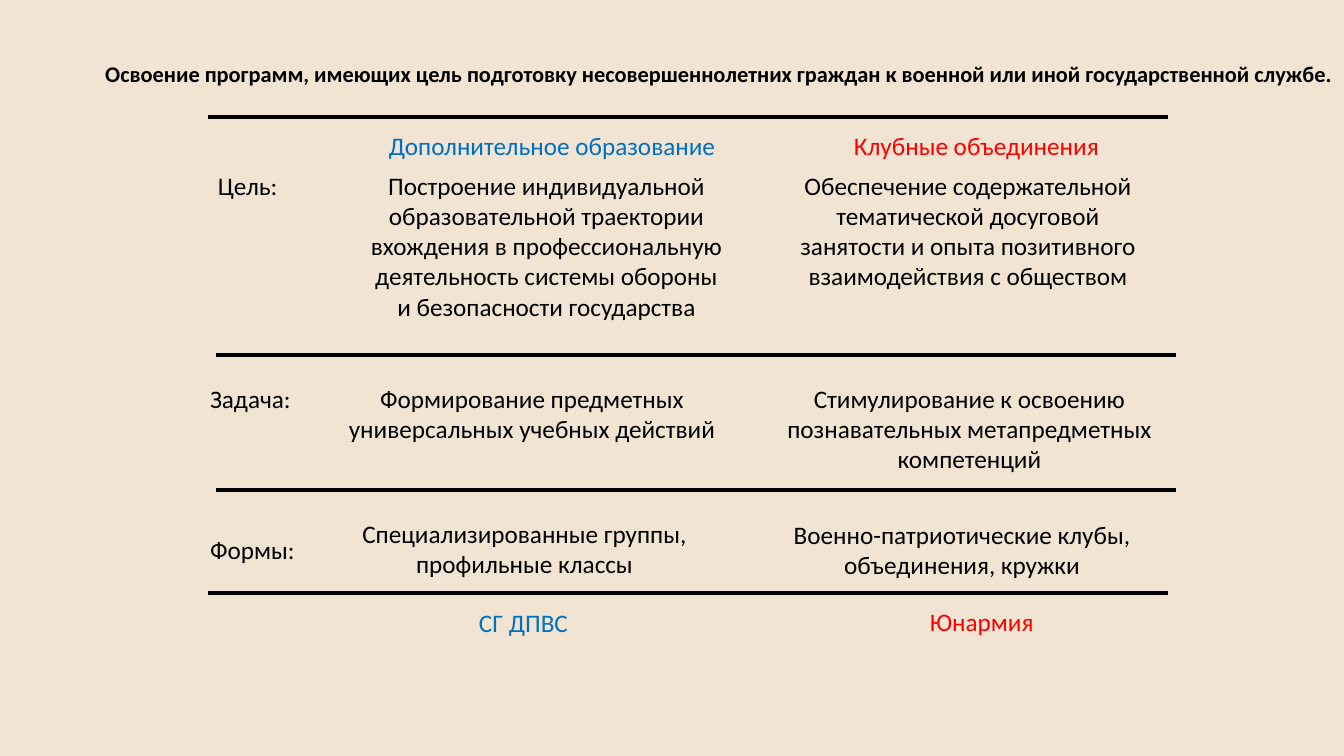
from pptx import Presentation
from pptx import util as u
from pptx.dml.color import RGBColor
from pptx.enum import shapes, text
from pptx.oxml.ns import qn
from lxml import etree

SCALE = 914400 / 100.8  # EMU in one px
BLACK, BLUE, RED, SAND = "000000", "0070C0", "FF0000", "F1E4D3"


def px(length):
    return u.Emu(round(length * SCALE))


def color(hex_code):
    return RGBColor.from_string(hex_code)


class Board:
    """Holds the style and the current slide."""

    font = "Calibri"
    size = 18
    rule_width = 2.25

    def __init__(self, deck):
        self.slide = deck.slides.add_slide(deck.slide_layouts[6])

    def background(self, hex_code):
        fill = self.slide.background.fill
        fill.solid()
        fill.fore_color.rgb = color(hex_code)

    def text(self, content, left, top, width, height=None, *, tint=BLACK, size=None,
             bold=False, centered=False, wrap=False, side=10, spacing=None, indent=0):
        lines = content.split("\n")
        height = height or round(10 + 30.5 * len(lines))
        box = self.slide.shapes.add_textbox(px(left), px(top), px(width), px(height))
        frame = box.text_frame
        frame.word_wrap = wrap
        frame.auto_size = (text.MSO_AUTO_SIZE.NONE if wrap
                           else text.MSO_AUTO_SIZE.SHAPE_TO_FIT_TEXT)
        frame.margin_left = frame.margin_right = px(side)
        frame.margin_top = frame.margin_bottom = px(5)
        for number, line in enumerate(lines):
            paragraph = frame.paragraphs[0] if number == 0 else frame.add_paragraph()
            paragraph.alignment = text.PP_ALIGN.CENTER if centered else text.PP_ALIGN.LEFT
            if spacing:
                paragraph.line_spacing = spacing
            if indent:
                paragraph._p.get_or_add_pPr().set("marL", str(px(indent)))
            run = paragraph.add_run()
            run.text = line
            run.font.name = self.font
            run.font.size = u.Pt(size or self.size)
            run.font.bold = bold
            run.font.color.rgb = color(tint)

    def rule(self, left, top, width):
        line = self.slide.shapes.add_connector(
            shapes.MSO_CONNECTOR.STRAIGHT, px(left), px(top), px(left + width), px(top))
        line.line.color.rgb = color(BLACK)
        line.line.width = u.Pt(self.rule_width)
        etree.SubElement(line._element.spPr, qn("a:effectLst"))


def main():
    deck = Presentation()
    deck.slide_width, deck.slide_height = px(1344), px(756)
    board = Board(deck)
    board.background(SAND)

    # Title
    board.text("Освоение программ, имеющих цель подготовку несовершеннолетних граждан "
               "к военной или иной государственной службе.",
               89, 58, 1256, 95, size=16, bold=True, centered=True, wrap=True,
               side=5, spacing=0.9, indent=4)

    # Column headings
    board.text("Дополнительное образование", 379, 125, 352, tint=BLUE)
    board.text("Клубные объединения", 844, 125, 268, tint=RED)

    # Row labels
    for label, left, top, width in (("Цель:", 208, 165, 88),
                                    ("Задача:", 200, 378, 113),
                                    ("Формы:", 200, 529, 113)):
        board.text(label, left, top, width)

    # Row contents: education on the left, clubs on the right
    contents = (
        ("Построение индивидуальной\nобразовательной траектории\n"
         "вхождения в профессиональную\nдеятельность системы обороны\n"
         "и безопасности государства", 335, 165, 423),
        ("Обеспечение содержательной\nтематической досуговой\n"
         "занятости и опыта позитивного\nвзаимодействия с обществом", 768, 165, 400),
        ("Формирование предметных\nуниверсальных учебных действий", 319, 378, 426),
        ("Стимулирование к освоению\nпознавательных метапредметных\nкомпетенций",
         756, 378, 427),
        ("Специализированные группы,\nпрофильные классы", 336, 513, 377),
        ("Военно-патриотические клубы,\nобъединения, кружки", 764, 514, 396),
    )
    for content, left, top, width in contents:
        board.text(content, left, top, width, centered=True)

    # Rules between the rows
    for left, top in ((208, 117), (216, 355), (216, 490), (208, 593)):
        board.rule(left, top, 960)

    # Examples under the columns
    board.text("СГ ДПВС", 474, 602, 101, tint=BLUE, side=5)
    board.text("Юнармия", 925, 601, 115, tint=RED, side=5)

    deck.save("out.pptx")


if __name__ == "__main__":
    main()
